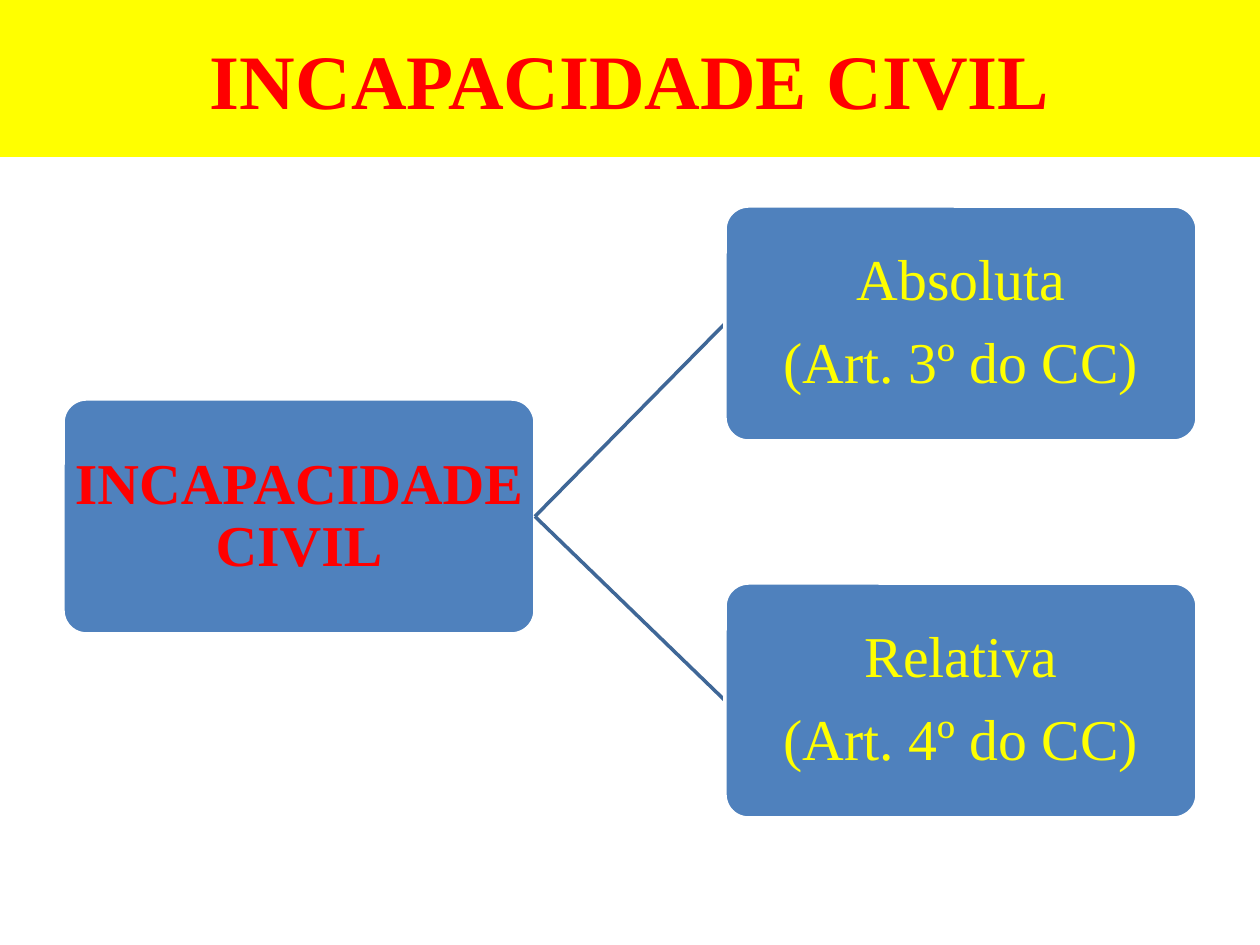
from dataclasses import dataclass

from lxml.etree import SubElement
from pptx import Presentation
from pptx.dml.color import RGBColor
from pptx.enum.shapes import MSO_CONNECTOR, MSO_SHAPE
from pptx.enum.text import MSO_ANCHOR, PP_ALIGN
from pptx.oxml.ns import qn
from pptx.shapes.autoshape import Shape
from pptx.shapes.connector import Connector
from pptx.slide import Slide
from pptx.text.text import TextFrame
from pptx.util import Emu, Pt

PX_PER_INCH = 126
FONT = "Times New Roman"
RED = RGBColor(0xFF, 0x00, 0x00)
YELLOW = RGBColor(0xFF, 0xFF, 0x00)
BLUE = RGBColor(0x4F, 0x81, 0xBD)
LINK_BLUE = RGBColor(0x3F, 0x67, 0x97)
WHITE = RGBColor(0xFF, 0xFF, 0xFF)

BOX_WIDTH, BOX_HEIGHT = 472, 235
TEXT_INSET = 3
RIGHT_SIDE, LEFT_SIDE = 3, 1


@dataclass(frozen=True)
class Concept:
    left: int
    top: int
    lines: tuple[str, ...]
    color: RGBColor
    bold: bool = False


ROOT = Concept(63, 399, ("INCAPACIDADE CIVIL",), RED, True)
BRANCHES = (
    Concept(725, 206, ("Absoluta", "(Art. 3º do CC)"), YELLOW),
    Concept(725, 583, ("Relativa", "(Art. 4º do CC)"), YELLOW),
)


def px(length: int) -> Emu:
    return Emu(round(length * 914400 / PX_PER_INCH))


def write_lines(frame: TextFrame, lines: tuple[str, ...], size: int,
                color: RGBColor, bold: bool) -> None:
    frame.word_wrap = True
    frame.vertical_anchor = MSO_ANCHOR.MIDDLE
    frame.text = "\n".join(lines)
    for paragraph in frame.paragraphs:
        paragraph.alignment = PP_ALIGN.CENTER
        paragraph.font.name = FONT
        paragraph.font.size = Pt(size)
        paragraph.font.bold = bold
        paragraph.font.color.rgb = color


def add_heading(slide: Slide, text: str) -> None:
    heading = slide.shapes.title
    heading.left, heading.top = px(0), px(0)
    heading.width, heading.height = px(1260), px(157)
    heading.fill.solid()
    heading.fill.fore_color.rgb = YELLOW
    write_lines(heading.text_frame, (text,), 44, RED, True)


def add_concept(slide: Slide, concept: Concept) -> Shape:
    box = slide.shapes.add_shape(
        MSO_SHAPE.ROUNDED_RECTANGLE, px(concept.left), px(concept.top),
        px(BOX_WIDTH), px(BOX_HEIGHT))
    box.adjustments[0] = 0.1
    box.shadow.inherit = False
    box.fill.solid()
    box.fill.fore_color.rgb = BLUE
    box.line.color.rgb = WHITE
    box.line.width = Pt(2)
    frame = box.text_frame
    frame.margin_left = frame.margin_right = px(TEXT_INSET)
    frame.margin_top = frame.margin_bottom = px(TEXT_INSET)
    write_lines(frame, concept.lines, 33, concept.color, concept.bold)
    for paragraph in frame.paragraphs:
        paragraph.line_spacing = 0.9
        paragraph.space_after = Pt(11.5)
    return box


def add_link(slide: Slide, root_box: Shape) -> Connector:
    link = slide.shapes.add_connector(MSO_CONNECTOR.STRAIGHT, 0, 0, 0, 0)
    link.begin_connect(root_box, RIGHT_SIDE)
    link.line.color.rgb = LINK_BLUE
    link.line.width = Pt(2)
    SubElement(link._element.spPr, qn("a:effectLst"))
    return link


def main() -> None:
    presentation = Presentation()
    presentation.slide_width, presentation.slide_height = px(1260), px(945)
    slide = presentation.slides.add_slide(presentation.slide_layouts[5])
    add_heading(slide, "INCAPACIDADE CIVIL")
    root_box = add_concept(slide, ROOT)
    for branch in BRANCHES:
        link = add_link(slide, root_box)
        link.end_connect(add_concept(slide, branch), LEFT_SIDE)
    presentation.save("out.pptx")


if __name__ == "__main__":
    main()
